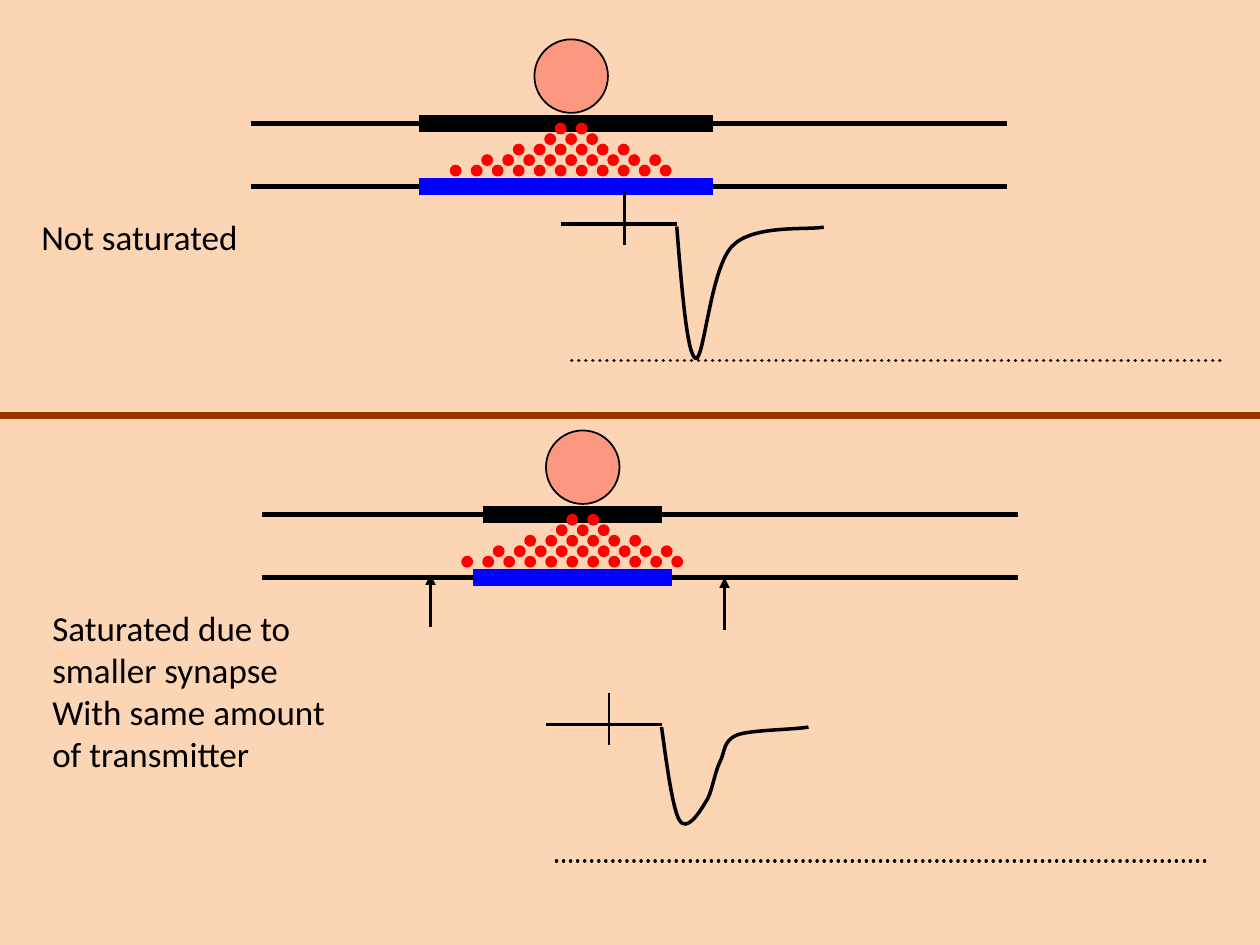
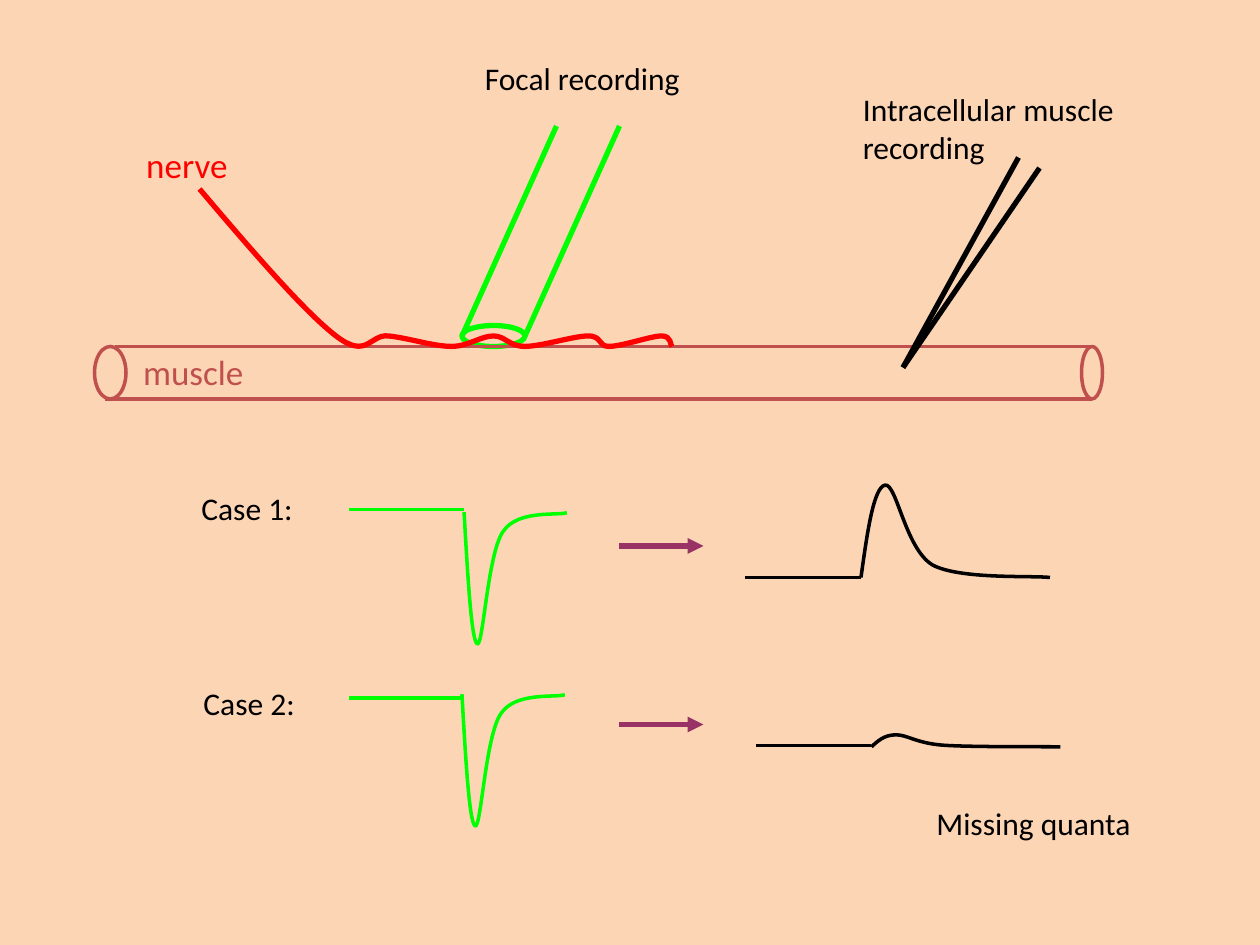
from pptx import Presentation
from pptx import util as u
from pptx.dml import color
from pptx.enum import dml, shapes, text
from pptx.oxml.ns import qn
from lxml import etree

# Grid: square cells, 120 columns by 90 rows
COLS = 120
CELL = u.Inches(10) / COLS

BLACK, RED, BLUE, GREEN = "000000", "FF0000", "0000FF", "00FF00"
PEACH, BROWN, BRICK, PLUM = "FCD5B5", "993300", "C0504D", "993366"

# Curves: a start point, then three points for each Bezier piece
DIP = [(0, .25), (.5, 6.4), (1, 12.5), (1.8, 12.8), (2.6, 13.1),
       (3.2, 4.2), (5.3, 2.1), (7.3, 0), (12.6, .6), (14, .3)]
BLUNT = [(0, .24), (.24, 1.8), (.96, 7.9), (1.7, 9.1), (2.4, 10.3), (3.6, 8.4),
         (4.2, 7.4), (4.8, 6.6), (5, 4.8), (5.5, 3.7), (6.1, 2.6),
         (5.8, 1.6), (7.2, 1), (8.5, .5), (12.6, .5), (14, .24)]
PEAK = [(0, 0), (.6, -4.3), (1.2, -8.6), (2.3, -8.8), (3.4, -9),
        (4.2, -2.8), (6.8, -1.2), (9.4, .2), (16.2, -.2), (18, 0)]
NERVE = [(19, 18), (24, 23.9), (29, 29.7), (32, 32), (35, 34.3), (35.2, 31.8),
         (37, 32), (38.9, 32.2), (41.3, 33), (43, 33), (44.6, 33), (45.8, 32),
         (47, 32), (48.1, 32), (48.5, 33), (50, 33), (51.5, 33), (54.7, 32),
         (56, 32), (57.4, 32), (56.9, 33), (58, 33), (59.2, 33), (62, 32),
         (63, 32), (64, 32), (63.8, 32.9), (64, 33)]

# Transmitter cloud: first column (from the vesicle's left) and dots per row
CLOUD = [(2, 2), (1, 3), (-2, 6), (-5, 9), (-8, 11)]


def rgb(code):
    return color.RGBColor.from_string(code)


def grid(*cells):
    return [u.Emu(round(c * CELL)) for c in cells]


def bend(item):
    """Turn each three straight steps of an outline into one Bezier piece."""
    steps = list(item._element.iter(qn("a:lnTo")))
    for first, second, last in zip(steps[::3], steps[1::3], steps[2::3]):
        first.addprevious(piece := etree.Element(qn("a:cubicBezTo")))
        for step in (first, second, last):
            piece.append(step[0])
            step.getparent().remove(step)


def write(box, words, size=18, ink=BLACK, font="Calibri"):
    frame = box.text_frame
    frame.word_wrap = False
    frame.auto_size = text.MSO_AUTO_SIZE.SHAPE_TO_FIT_TEXT
    frame.text = words
    for para in frame.paragraphs:
        for run in para.runs:
            run.font.size = u.Pt(size)
            run.font.name = font
            run.font.color.rgb = rgb(ink)


class Board:
    def __init__(self):
        self.deck = Presentation()
        self.deck.slide_width, self.deck.slide_height = grid(COLS, 90)

    def page(self):
        self.slide = self.deck.slides.add_slide(self.deck.slide_layouts[6])
        fill = self.slide.background.fill
        fill.solid()
        fill.fore_color.rgb = rgb(PEACH)

    def stroke(self, item, ink, width):
        item.line.color.rgb = rgb(ink)
        item.line.width = u.Pt(width)

    def line(self, x1, y1, x2, y2, ink=BLACK, width=2, dots=False, arrow=False):
        item = self.slide.shapes.add_connector(
            shapes.MSO_CONNECTOR.STRAIGHT, *grid(x1, y1, x2, y2))
        self.stroke(item, ink, width)
        edge = item._element.spPr.find(qn("a:ln"))
        if dots:
            item.line.dash_style = dml.MSO_LINE.ROUND_DOT
            edge.set("cap", "rnd")
        if arrow:
            etree.SubElement(edge, qn("a:tailEnd"), type="triangle")
        etree.SubElement(item._element.spPr, qn("a:effectLst"))

    def oval(self, x, y, wide, high, ink=BLACK, width=1, fill=None, alpha=None):
        item = self.slide.shapes.add_shape(
            shapes.MSO_SHAPE.OVAL, *grid(x, y, wide, high))
        item.shadow.inherit = False
        self.stroke(item, ink, width)
        if fill is None:
            item.fill.background()
            return
        item.fill.solid()
        item.fill.fore_color.rgb = rgb(fill)
        if alpha:
            tint = item._element.spPr.find(qn("a:solidFill"))[0]
            etree.SubElement(tint, qn("a:alpha"), val=str(alpha * 1000))

    def curve(self, pts, x=0, y=0, wide=1, high=1, ink=BLACK, width=2):
        spots = [grid(x + a * wide, y + b * high) for a, b in pts]
        pen = self.slide.shapes.build_freeform(*spots[0])
        pen.add_line_segments(spots[1:], close=False)
        item = pen.convert_to_shape()
        bend(item)
        item.shadow.inherit = False
        item.fill.background()
        self.stroke(item, ink, width)

    def label(self, words, x, y, wide, high, **style):
        write(self.slide.shapes.add_textbox(*grid(x, y, wide, high)), words, **style)

    # Two membranes with their thick zones, a vesicle and its transmitter
    def synapse(self, x, y, upper, lower):
        for row in (y, y + 6):
            self.line(x, row, x + 72, row, width=3)
        for row, zone, ink in ((y + 6, lower, BLUE), (y, upper, BLACK)):
            self.line(x + zone[0], row, x + zone[1], row, ink, 10)
        left = x + 27
        self.oval(left, y - 8, 7, 7, fill=RED, alpha=29)
        for row, (start, count) in enumerate(CLOUD):
            for k in range(count):
                self.oval(left + start + 2 * k, y + row, 1, 1, RED, .75, RED)

    # Flat baseline that ends at x
    def base(self, x, y, ink=BLACK):
        self.line(x, y, x - 11, y, ink)

    # Response, baseline, stimulus tick and dotted reference level
    def trace(self, x, y, pts):
        self.curve(pts, x, y)
        self.base(x, y)
        self.line(x - 5, y - 3, x - 5, y + 2, width=1.5)
        self.line(x - 10, y + 13, x + 52, y + 13, dots=True)


def saturation(b):
    b.page()
    # Lower half: small synapse
    b.synapse(25, 49, upper=(21, 38), lower=(20, 39))
    b.label("Saturated due to\nsmaller synapse\nWith same amount\nof transmitter",
            3.8, 57.17, 32, 17.2, size=20)
    b.trace(63, 69, BLUNT)
    for x, y in ((41, 54.7), (69, 55)):
        b.line(x, y + 5, x, y, width=1.5, arrow=True)
    # Upper half: large synapse
    b.synapse(23.9, 11.75, upper=(16, 44), lower=(16, 44))
    b.label("Not saturated", 2.75, 19.9, 23.9, 5.2, size=20)
    b.trace(64.45, 21.33, DIP)
    # Divider
    b.line(0, 39.6, COLS, 39.6, BROWN, 4)


def recording(b):
    b.page()
    # Muscle fibre and focal electrode
    b.oval(44, 31, 6, 2, GREEN, 3)
    b.oval(9, 33, 3, 5, BRICK, 2)
    b.line(11, 33, 104, 33, BRICK)
    b.line(10, 38, 104, 38, BRICK)
    b.oval(103, 33, 2, 5, BRICK, 2)
    b.curve(NERVE, ink=RED, width=3)
    for x in (50, 44):
        b.line(x, 32, x + 9, 12, GREEN, 3)
    # Intracellular electrode
    for x, y in ((97, 15), (99, 16)):
        b.line(x, y, 86, 35, width=3)
    # Cases: focal trace, arrow, muscle trace
    cases = [(44.2, 48.53, 48.53, 52, 82, 55, 55, 1),
             (44, 65.87, 66.5, 69, 83, 71.13, 71, .13)]
    for x, dip, flat, mid, right, low, rest, high in cases:
        b.curve(DIP, x, dip, wide=.7, ink=GREEN)
        b.base(44.2, flat, GREEN)
        b.line(59, mid, 67, mid, PLUM, 3, arrow=True)
        b.curve(PEAK, right, low, high=high)
        b.base(right, rest)
    # Labels
    b.label("Case 1:", 18, 46, 12.7, 4.8)
    b.label("Case 2:", 18.2, 64.6, 12.7, 4.8)
    b.label("Focal recording", 45, 5, 23, 4.8)
    b.label("Intracellular muscle\nrecording", 81, 8, 28.2, 8.4)
    b.label("Missing quanta", 88, 76, 22.6, 4.8)
    b.label("muscle", 12.45, 32.8, 13.9, 5.2, size=20, ink=BRICK)
    b.label("nerve", 12.75, 13.1, 11.3, 5.2, size=20, ink=RED)


def main():
    board = Board()
    saturation(board)
    recording(board)
    board.deck.save("out.pptx")


if __name__ == "__main__":
    main()
